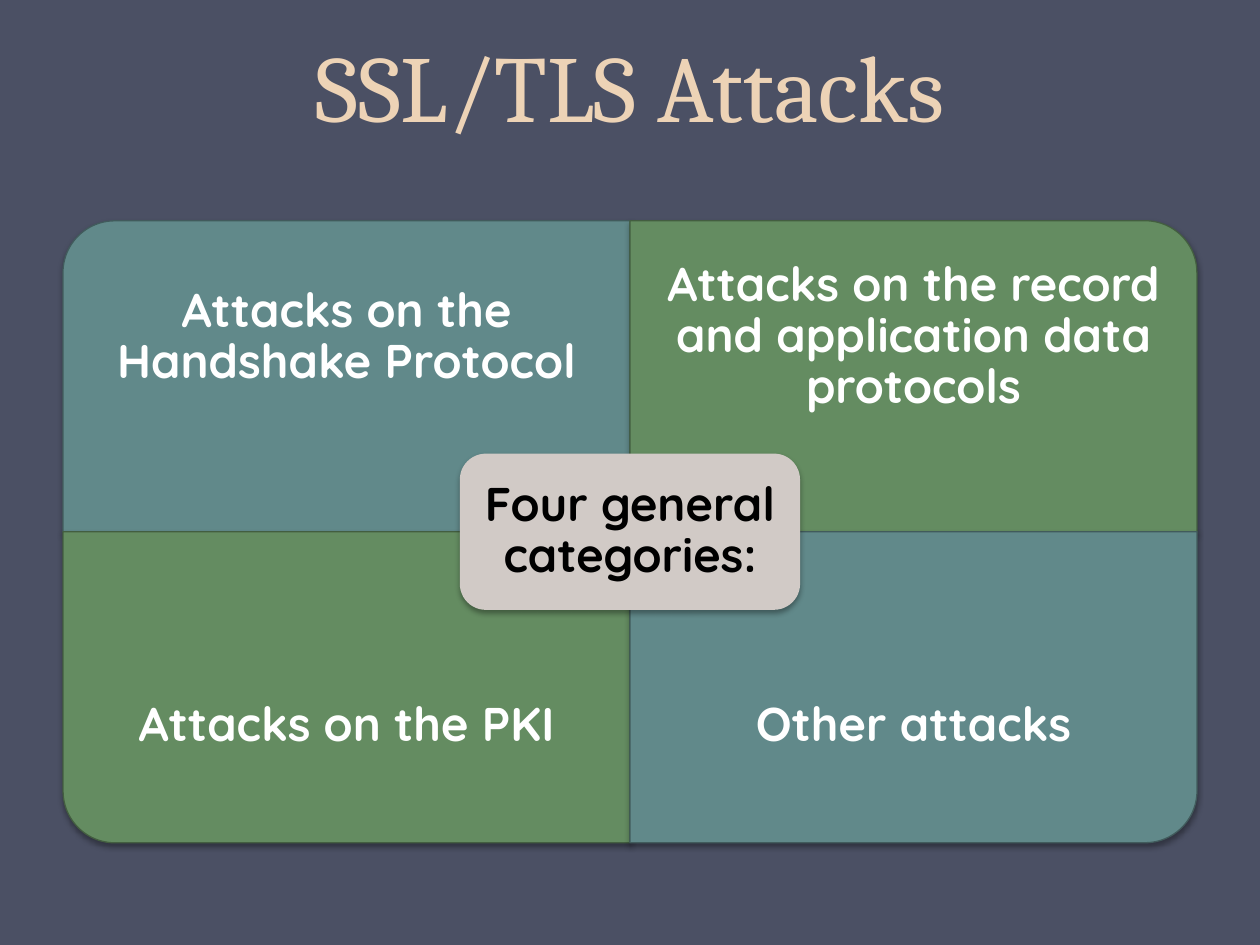
"""Build the SSL/TLS attacks slide: four categories around a central label."""
from lxml import etree
from pptx import Presentation, util as u
from pptx.dml.color import RGBColor
from pptx.enum import shapes, text
from pptx.oxml.ns import qn

TITLE = "SSL/TLS Attacks"
HUB = "Four general categories:"
TEAL, GREEN = ("61898A", "415B5C"), ("648C61", "435E40")
CATEGORIES = [
    ("Attacks on the Handshake Protocol", 0, 0, 270, TEAL),
    ("Attacks on the record and application data protocols", 1, 0, 0, GREEN),
    ("Attacks on the PKI", 0, 1, 180, GREEN),
    ("Other attacks", 1, 1, 90, TEAL),
]
LEFT, TOP, WIDTH, HEIGHT = 1.27, 4.45, 11.43, 6.27
LABEL_HEIGHT = 0.75 * HEIGHT
HUB_WIDTH, HUB_HEIGHT, HUB_INSET = 6.86, 3.15, 0.15
LABEL_FONT = {"name": "Quicksand", "size": u.Pt(27), "bold": True}
TITLE_FONT = {"name": "Cambria", "size": u.Pt(54)}
SHADOW = {"blurRad": "40000", "dist": "23000", "dir": "5400000", "rotWithShape": "0"}


def color(code):
    return RGBColor.from_string(code)


def apply(target, values):
    for key, value in values.items():
        setattr(target, key, value)


def centered(x, y, width, height):
    return x - width / 2, y - height / 2, width, height


def add_panel(slide, preset, box, fill, edge=None, rotation=0):
    panel = slide.shapes.add_shape(preset, *map(u.Cm, box))
    panel.rotation = rotation
    panel.fill.solid()
    panel.fill.fore_color.rgb = color(fill)
    if edge:
        panel.line.color.rgb = color(edge)
        panel.line.width = u.Pt(0.75)
    else:
        panel.line.fill.background()
    panel.shadow.inherit = False
    effects = panel._element.spPr.find(qn("a:effectLst"))
    shadow = etree.SubElement(effects, qn("a:outerShdw"), SHADOW)
    tint = etree.SubElement(shadow, qn("a:srgbClr"), val="000000")
    etree.SubElement(tint, qn("a:alpha"), val="35000")


def add_label(slide, box, words, ink, font, anchor, spacing, margins):
    frame = slide.shapes.add_textbox(*map(u.Cm, box)).text_frame
    sides = ("margin_left", "margin_right", "margin_top", "margin_bottom")
    apply(frame, {"word_wrap": True, "vertical_anchor": anchor,
                  **dict(zip(sides, map(u.Cm, margins)))})
    line = frame.paragraphs[0]
    apply(line, {"alignment": text.PP_ALIGN.CENTER, "line_spacing": spacing})
    run = line.add_run()
    run.text = words
    apply(run.font, font)
    run.font.color.rgb = color(ink)


def main():
    deck = Presentation()
    apply(deck, {"slide_width": u.Cm(25.4), "slide_height": u.Cm(19.05)})
    slide = deck.slides.add_slide(deck.slide_layouts[6])
    slide.background.fill.solid()
    slide.background.fill.fore_color.rgb = color("4B5064")

    add_label(slide, (0.7, -1.47, 24, 4.45), TITLE, "EDD3B6", TITLE_FONT,
              text.MSO_ANCHOR.BOTTOM, u.Pt(58), (0.25, 0.25, 0.13, 0.13))

    middle = text.MSO_ANCHOR.MIDDLE
    for words, column, row, rotation, (fill, edge) in CATEGORIES:
        x, y = LEFT + column * WIDTH, TOP + row * HEIGHT
        size = (HEIGHT, WIDTH) if rotation % 180 else (WIDTH, HEIGHT)
        add_panel(slide, shapes.MSO_SHAPE.ROUND_1_RECTANGLE,
                  centered(x + WIDTH / 2, y + HEIGHT / 2, *size), fill, edge, rotation)
        label_top = y + row * (HEIGHT - LABEL_HEIGHT)
        add_label(slide, (x, label_top, WIDTH, LABEL_HEIGHT), words, "FFFFFF",
                  LABEL_FONT, middle, 0.9, [0.53] * 4)

    center = LEFT + WIDTH, TOP + HEIGHT
    add_panel(slide, shapes.MSO_SHAPE.ROUNDED_RECTANGLE,
              centered(*center, HUB_WIDTH, HUB_HEIGHT), "D1CAC6")
    add_label(slide, centered(*center, HUB_WIDTH - 2 * HUB_INSET, HUB_HEIGHT - 2 * HUB_INSET),
              HUB, "000000", LABEL_FONT, middle, 0.9, [0.28] * 4)
    deck.save("out.pptx")


if __name__ == "__main__":
    main()
